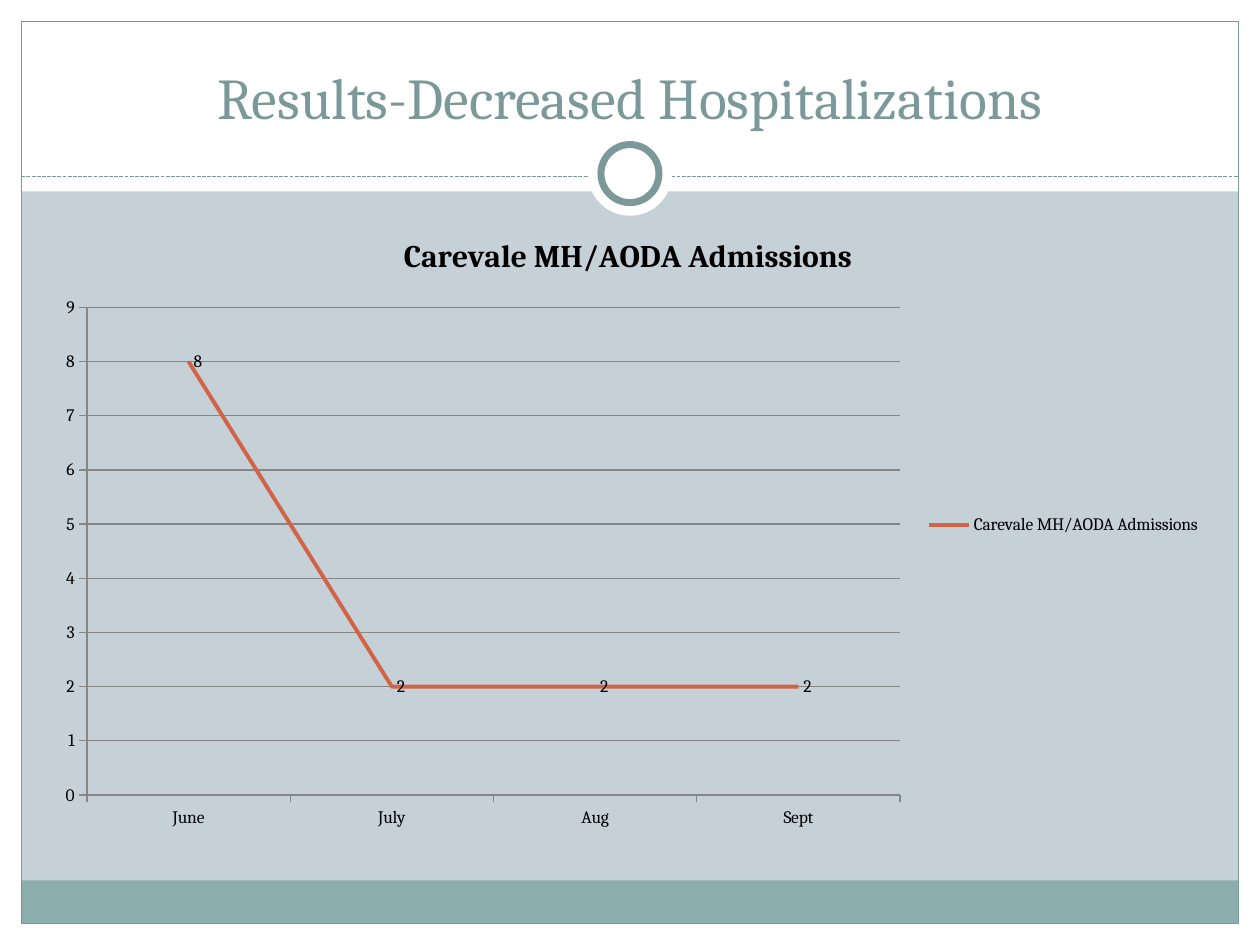
from lxml import etree
from pptx import Presentation
from pptx import util as u
from pptx.chart.data import CategoryChartData
from pptx.dml.color import RGBColor
from pptx.enum import chart as ch, dml, shapes, text
from pptx.oxml.ns import qn


def color(code):
    return RGBColor.from_string(code)


def cm(*vals):
    return [u.Cm(v) for v in vals]


class Deck:
    font = "Cambria"
    white, teal, band = "FFFFFF", "7C999A", "8CADAE"
    back, grid, red, black = "C5D1D7", "868686", "D16349", "000000"

    def __init__(self, wide, high):
        self.prs = Presentation()
        self.prs.slide_width, self.prs.slide_height = cm(wide, high)
        self.slide = self.prs.slides.add_slide(self.prs.slide_layouts[6])
        fill = self.slide.background.fill
        fill.solid()
        fill.fore_color.rgb = color(self.back)

    def stroke(self, line, code, width):
        line.color.rgb = color(code)
        line.width = u.Pt(width)

    def shape(self, kind, box, fill=None, line=None, width=0.75):
        item = self.slide.shapes.add_shape(kind, *cm(*box))
        item.shadow.inherit = False
        if fill:
            item.fill.solid()
            item.fill.fore_color.rgb = color(fill)
        else:
            item.fill.background()
        if line:
            self.stroke(item.line, line, width)
        else:
            item.line.fill.background()

    def rect(self, *box, **style):
        self.shape(shapes.MSO_SHAPE.RECTANGLE, box, **style)

    def disc(self, x, y, size, **style):
        box = x - size / 2, y - size / 2, size, size
        self.shape(shapes.MSO_SHAPE.OVAL, box, **style)

    def rule(self, *ends):
        item = self.slide.shapes.add_connector(
            shapes.MSO_CONNECTOR.STRAIGHT, *cm(*ends))
        self.stroke(item.line, self.teal, 0.75)
        item.line.dash_style = dml.MSO_LINE.SQUARE_DOT
        etree.SubElement(item._element.spPr, qn("a:effectLst"))

    def style(self, font, size, code, bold=False):
        font.name, font.size, font.bold = self.font, u.Pt(size), bold
        font.color.rgb = color(code)

    def title(self, words, *box):
        frame = self.slide.shapes.add_textbox(*cm(*box)).text_frame
        frame.word_wrap = True
        frame.vertical_anchor = text.MSO_ANCHOR.BOTTOM
        para = frame.paragraphs[0]
        para.text = words
        para.alignment = text.PP_ALIGN.CENTER
        self.style(para.font, 33, self.teal)

    def chart(self, name, cats, vals, *box):
        data = CategoryChartData()
        data.categories = cats
        data.add_series(name, vals)
        chart = self.slide.shapes.add_chart(
            ch.XL_CHART_TYPE.LINE, *cm(*box), data).chart
        self.style(chart.font, 10, self.black)

        # Heading and legend
        chart.has_title = True
        para = chart.chart_title.text_frame.paragraphs[0]
        para.text = name
        self.style(para.font, 18, self.black, bold=True)
        chart.has_legend = True
        chart.legend.position = ch.XL_LEGEND_POSITION.RIGHT
        chart.legend.include_in_layout = False

        # Axes
        for axis in (chart.category_axis, chart.value_axis):
            axis.major_tick_mark = ch.XL_TICK_MARK.OUTSIDE
            axis.minor_tick_mark = ch.XL_TICK_MARK.NONE
            self.stroke(axis.format.line, self.grid, 0.75)
        axis = chart.value_axis
        axis.minimum_scale, axis.maximum_scale, axis.major_unit = 0, 9, 1
        axis.has_major_gridlines = True
        self.stroke(axis.major_gridlines.format.line, self.grid, 0.75)

        # Line and values
        plot = chart.plots[0]
        plot.vary_by_categories = False
        line = plot.series[0]
        line.smooth = False
        line.marker.style = ch.XL_MARKER_STYLE.NONE
        self.stroke(line.format.line, self.red, 2.25)
        labels = line.data_labels
        labels.show_value = True
        labels.position = ch.XL_LABEL_POSITION.RIGHT
        self.style(labels.font, 10, self.black)


def main():
    wide, high, edge = 25.4, 19.05, 0.43
    deck = Deck(wide, high)

    # White border and header
    deck.rect(0, high - edge, wide, edge, fill=deck.white)
    deck.rect(0, 0, wide, 3.86, fill=deck.white)
    for x in (0, wide - edge):
        deck.rect(x, 0, edge, high, fill=deck.white)

    # Footer band and frame
    inner = wide - 2 * edge
    deck.rect(edge, 17.75, inner, 0.87, fill=deck.band)
    deck.rect(edge, edge, inner, high - 2 * edge, line=deck.teal)

    # Dashed rule with ring
    deck.rule(edge, 3.56, wide - edge, 3.56)
    deck.disc(wide / 2, 3.5, 1.7, fill=deck.white)
    deck.disc(wide / 2, 3.5, 1.17, fill=deck.white, line=deck.teal, width=4)

    # Title and chart
    deck.title("Results-Decreased Hospitalizations", 0.85, 0.64, 23.7, 2.12)
    deck.chart("Carevale MH/AODA Admissions", ("June", "July", "Aug", "Sept"),
               (8, 2, 2, 2), 0.85, 4.23, 23.62, 12.7)
    deck.prs.save("out.pptx")


if __name__ == "__main__":
    main()
